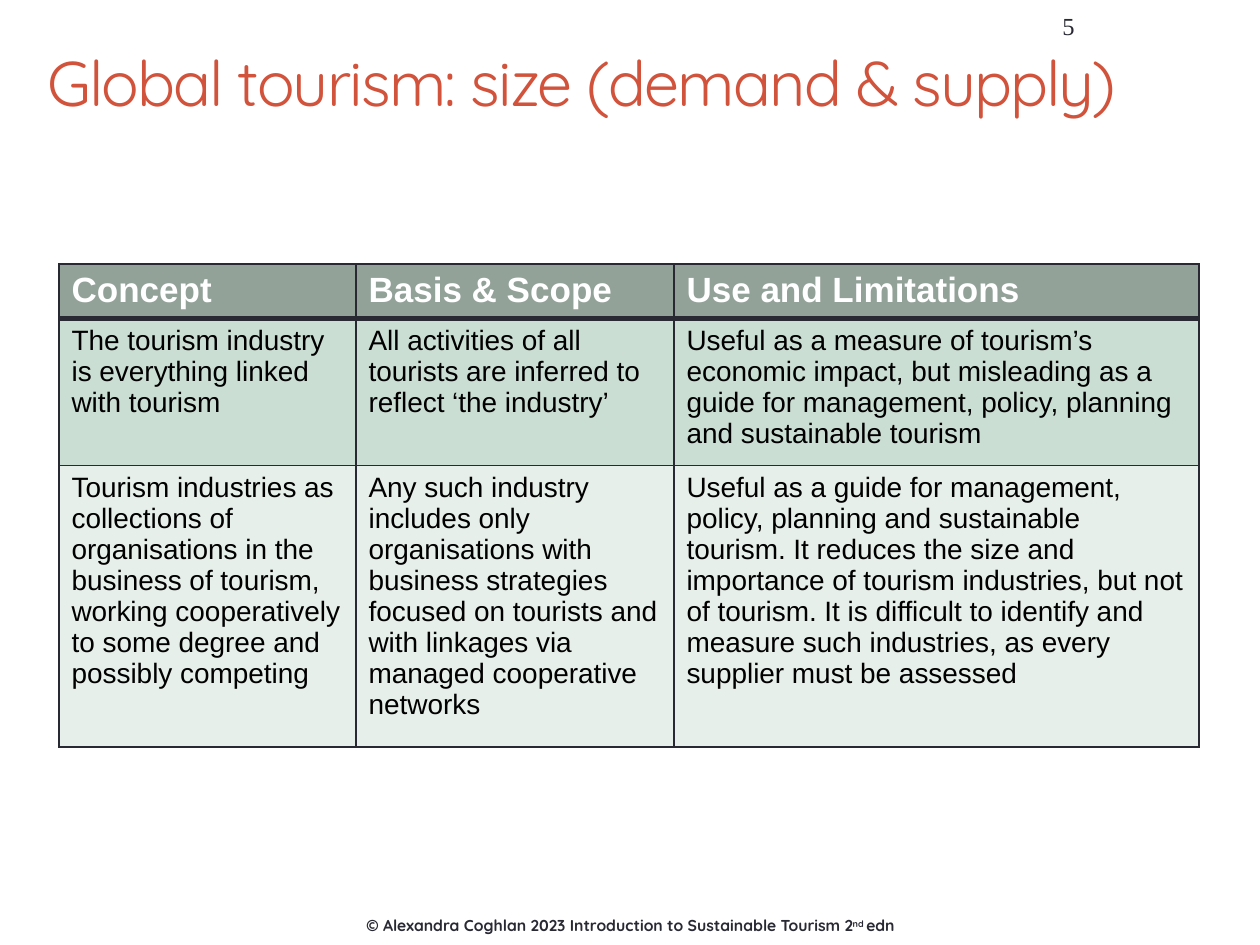
import pptx
import pptx.dml.color
import pptx.enum.text
import pptx.oxml
import pptx.oxml.ns
import pptx.util

RGBColor = pptx.dml.color.RGBColor
ALIGN = pptx.enum.text.PP_ALIGN
ANCHOR = pptx.enum.text.MSO_ANCHOR

INK = RGBColor(0x29, 0x29, 0x34)
ACCENT = RGBColor(0xD2, 0x53, 0x3C)
WHITE = RGBColor(0xFF, 0xFF, 0xFF)
BLACK = RGBColor(0x00, 0x00, 0x00)
HEADER_FILL = RGBColor(0x93, 0xA2, 0x99)
BAND_FILLS = [RGBColor(0xCB, 0xDE, 0xD3), RGBColor(0xE7, 0xEF, 0xEA)]

PX_PER_INCH = 126
THIN, THICK = 1, 3

TITLE_FORMAT = {"size": 36, "name": "Quicksand", "color": ACCENT}
FOOTER_FORMAT = {"size": 9, "name": "Quicksand", "color": INK, "bold": True}
NUMBER_FORMAT = {"size": 14, "name": "Times New Roman", "color": INK}
HEADER_FORMAT = {"size": 20, "name": "Arial", "color": WHITE, "bold": True}
BODY_FORMAT = {"size": 16, "name": "Arial", "color": BLACK, "bold": False}

COLUMN_WIDTHS = [297, 318, 525]
ROW_HEIGHTS = [52, 137, 262]
CONCEPTS = [
    ["Concept", "Basis & Scope", "Use and Limitations"],
    [
        "The tourism industry is everything linked with tourism",
        "All activities of all tourists are inferred to reflect ‘the industry’",
        "Useful as a measure of tourism’s economic impact, but misleading as a "
        "guide for management, policy, planning and sustainable tourism",
    ],
    [
        "Tourism industries as collections of organisations in the business of "
        "tourism, working cooperatively to some degree and possibly competing",
        "Any such industry includes only organisations with business strategies "
        "focused on tourists and with linkages via managed cooperative networks",
        "Useful as a guide for management, policy, planning and sustainable "
        "tourism. It reduces the size and importance of tourism industries, but "
        "not of tourism. It is difficult to identify and measure such industries, "
        "as every supplier must be assessed",
    ],
]


def px(length):
    return pptx.util.Emu(round(length * 914400 / PX_PER_INCH))


class SlideBuilder:
    def __init__(self, presentation):
        self.slide = presentation.slides.add_slide(presentation.slide_layouts[6])

    def style(self, font, text_format):
        for key, value in text_format.items():
            if key == "color":
                font.color.rgb = value
            else:
                setattr(font, key, pptx.util.Pt(value) if key == "size" else value)

    def text(self, box, pieces, text_format, align=ALIGN.LEFT, anchor=ANCHOR.TOP):
        """Add a one-paragraph text box; pieces are (text, run attributes)."""
        frame = self.slide.shapes.add_textbox(*map(px, box)).text_frame
        frame.word_wrap = True
        frame.vertical_anchor = anchor
        paragraph = frame.paragraphs[0]
        paragraph.alignment = align
        for words, attributes in pieces:
            run = paragraph.add_run()
            run.text = words
            self.style(run.font, text_format)
            for key, value in attributes.items():
                run.font._element.set(key, value)

    def borders(self, cell, widths):
        properties = cell._tc.get_or_add_tcPr()
        for side, width in widths.items():
            properties.append(pptx.oxml.parse_xml(
                f'<a:ln{side} {pptx.oxml.ns.nsdecls("a")} w="{pptx.util.Pt(width)}">'
                f'<a:solidFill><a:srgbClr val="{INK}"/></a:solidFill></a:ln{side}>'
            ))

    def table(self, left, top, rows, column_widths, row_heights):
        table = self.slide.shapes.add_table(
            len(rows), len(column_widths), px(left), px(top),
            px(sum(column_widths)), px(sum(row_heights)),
        ).table
        table.first_row = table.horz_banding = False
        for column, width in zip(table.columns, column_widths):
            column.width = px(width)
        for row, height in zip(table.rows, row_heights):
            row.height = px(height)
        for index, entries in enumerate(rows):
            is_header = index == 0
            widths = {
                "L": THIN,
                "R": THIN,
                "T": THICK if index == 1 else THIN,
                "B": THICK if is_header else THIN,
            }
            for column, words in enumerate(entries):
                cell = table.cell(index, column)
                self.borders(cell, widths)
                cell.fill.solid()
                cell.fill.fore_color.rgb = (
                    HEADER_FILL if is_header else BAND_FILLS[(index - 1) % 2]
                )
                run = cell.text_frame.paragraphs[0].add_run()
                run.text = words
                self.style(run.font, HEADER_FORMAT if is_header else BODY_FORMAT)


def main():
    presentation = pptx.Presentation()
    presentation.slide_width = px(1260)
    presentation.slide_height = px(945)
    builder = SlideBuilder(presentation)

    copyright_line = [
        ("© Alexandra Coghlan 2023 Introduction to Sustainable Tourism 2", {}),
        ("nd ", {"baseline": "30000"}),
        ("edn", {}),
    ]
    builder.text((333, 910, 595, 31), copyright_line, FOOTER_FORMAT,
                 ALIGN.CENTER, ANCHOR.MIDDLE)
    title = [("Global tourism: size (demand & supply)", {"spc": "-100"})]
    builder.text((35, 37, 1201, 157), title, TITLE_FORMAT)
    builder.table(59, 264, CONCEPTS, COLUMN_WIDTHS, ROW_HEIGHTS)
    builder.text((1050, 3, 147, 45), [("5", {})], NUMBER_FORMAT, anchor=ANCHOR.MIDDLE)

    presentation.save("out.pptx")


if __name__ == "__main__":
    main()
